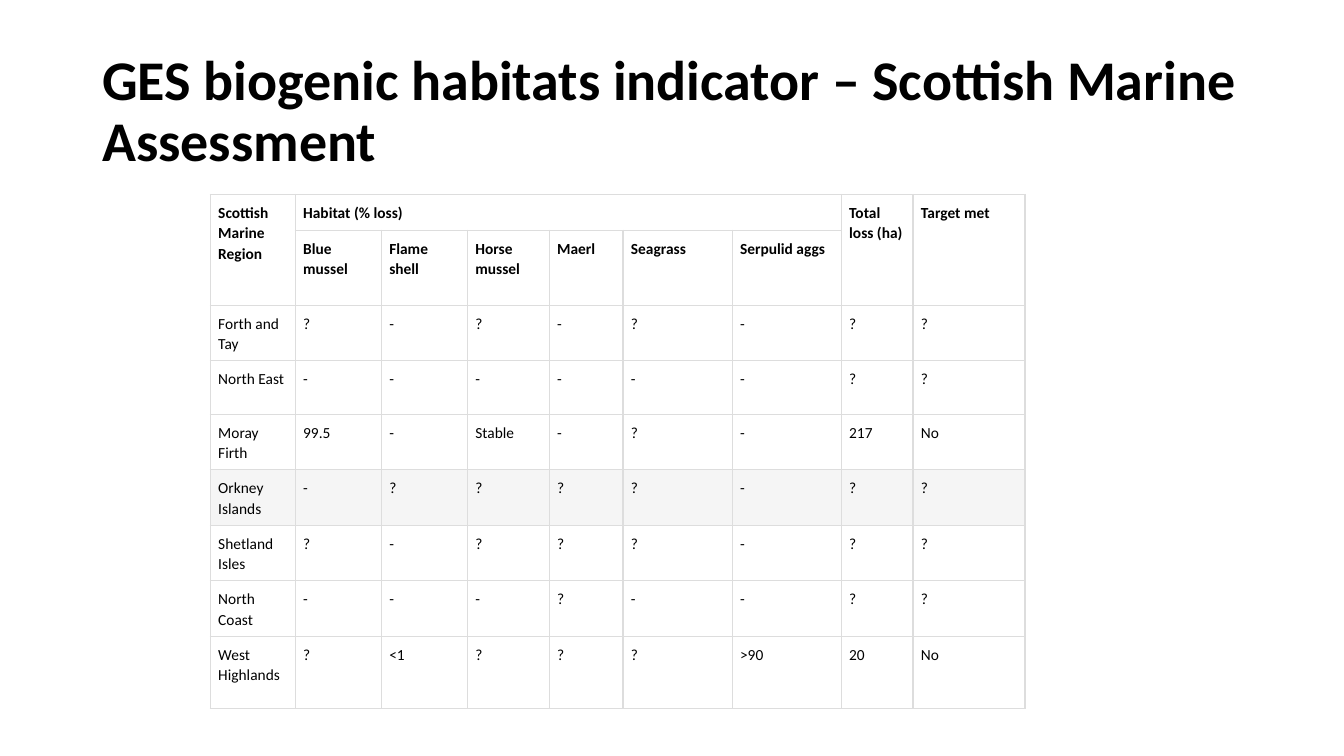
from typing import NamedTuple

from lxml.etree import SubElement
from pptx import Presentation
from pptx.dml.color import RGBColor
from pptx.enum.text import MSO_ANCHOR
from pptx.oxml.ns import qn
from pptx.slide import Slide
from pptx.table import Table, _Cell
from pptx.text.text import _Paragraph
from pptx.util import Cm, Pt

BLACK = RGBColor(0x00, 0x00, 0x00)
WHITE = RGBColor(0xFF, 0xFF, 0xFF)
LIGHT_GREY = RGBColor(0xF5, 0xF5, 0xF5)
BORDER_GREY = RGBColor(0xDD, 0xDD, 0xDD)
FONT_NAME = "Calibri"

CELL_MARGIN = Cm(0.2)
COLUMN_WIDTHS = [2.14, 2.17, 2.17, 2.06, 1.86, 2.75, 2.75, 1.81, 2.82]
HEADER_HEIGHTS = [0.87, 1.35]
REGION_HEIGHT = 1.35
LAST_REGION_HEIGHT = 1.83


class Region(NamedTuple):
    name: str
    habitat_losses: list[str]
    total_loss: str = "?"
    target_met: str = "?"
    fill: RGBColor = WHITE


class Span(NamedTuple):
    first: tuple[int, int]
    last: tuple[int, int]


HABITATS = ["Blue mussel", "Flame shell", "Horse mussel", "Maerl", "Seagrass", "Serpulid aggs"]
HEADERS = [
    ["Scottish Marine Region", "Habitat (% loss)", *[""] * 5, "Total loss (ha)", "Target met"],
    ["", *HABITATS, "", ""],
]
HEADER_SPANS = [
    Span((0, 0), (1, 0)),
    Span((0, 1), (0, 6)),
    Span((0, 7), (1, 7)),
    Span((0, 8), (1, 8)),
]
REGIONS = [
    Region("Forth and Tay", ["?", "-", "?", "-", "?", "-"]),
    Region("North East", ["-"] * 6),
    Region("Moray Firth", ["99.5", "-", "Stable", "-", "?", "-"], "217", "No"),
    Region("Orkney Islands", ["-", "?", "?", "?", "?", "-"], fill=LIGHT_GREY),
    Region("Shetland Isles", ["?", "-", "?", "?", "?", "-"]),
    Region("North Coast", ["-", "-", "-", "?", "-", "-"]),
    Region("West Highlands", ["?", "<1", "?", "?", "?", ">90"], "20", "No"),
]


def set_font(paragraph: _Paragraph, size: int, bold: bool) -> None:
    paragraph.font.name = FONT_NAME
    paragraph.font.size = Pt(size)
    paragraph.font.bold = bold
    paragraph.font.color.rgb = BLACK


def add_borders(cell: _Cell) -> None:
    properties = cell._tc.get_or_add_tcPr()
    for position, side in enumerate(("a:lnL", "a:lnR", "a:lnT", "a:lnB")):
        line = SubElement(properties, qn(side), w=str(Pt(1)))
        fill = SubElement(line, qn("a:solidFill"))
        SubElement(fill, qn("a:srgbClr"), val=str(BORDER_GREY))
        properties.insert(position, line)  # borders precede the cell fill


def fill_row(table: Table, row: int, texts: list[str], fill: RGBColor, bold: bool) -> None:
    for column, text in enumerate(texts):
        cell = table.cell(row, column)
        cell.text = text
        cell.margin_left = cell.margin_right = CELL_MARGIN
        cell.margin_top = cell.margin_bottom = CELL_MARGIN
        cell.fill.solid()
        cell.fill.fore_color.rgb = fill
        add_borders(cell)
        paragraph = cell.text_frame.paragraphs[0]
        paragraph.line_spacing = 1.07
        paragraph.space_after = Pt(8)
        set_font(paragraph, 11, bold)


def add_title(slide: Slide) -> None:
    title = slide.shapes.add_textbox(Cm(2.33), Cm(1.01), Cm(29.21), Cm(3.68))
    frame = title.text_frame
    frame.word_wrap = True
    frame.vertical_anchor = MSO_ANCHOR.MIDDLE
    paragraph = frame.paragraphs[0]
    paragraph.text = "GES biogenic habitats indicator – Scottish Marine Assessment"
    paragraph.line_spacing = 0.9
    set_font(paragraph, 40, True)


def add_habitat_table(slide: Slide) -> None:
    heights = [*HEADER_HEIGHTS, *[REGION_HEIGHT] * (len(REGIONS) - 1), LAST_REGION_HEIGHT]
    table = slide.shapes.add_table(
        len(heights), len(COLUMN_WIDTHS),
        Cm(5.3), Cm(4.9), Cm(sum(COLUMN_WIDTHS)), Cm(sum(heights)),
    ).table
    table.first_row = table.horz_banding = False
    for column, width in zip(table.columns, COLUMN_WIDTHS):
        column.width = Cm(width)
    for row, height in zip(table.rows, heights):
        row.height = Cm(height)

    for index, texts in enumerate(HEADERS):
        fill_row(table, index, texts, WHITE, bold=True)
    for index, region in enumerate(REGIONS, start=len(HEADERS)):
        texts = [region.name, *region.habitat_losses, region.total_loss, region.target_met]
        fill_row(table, index, texts, region.fill, bold=False)
    for span in HEADER_SPANS:
        table.cell(*span.first).merge(table.cell(*span.last))


def main() -> None:
    presentation = Presentation()
    presentation.slide_width = Cm(33.87)
    presentation.slide_height = Cm(19.05)
    slide = presentation.slides.add_slide(presentation.slide_layouts[6])
    add_title(slide)
    add_habitat_table(slide)
    presentation.save("out.pptx")


if __name__ == "__main__":
    main()
